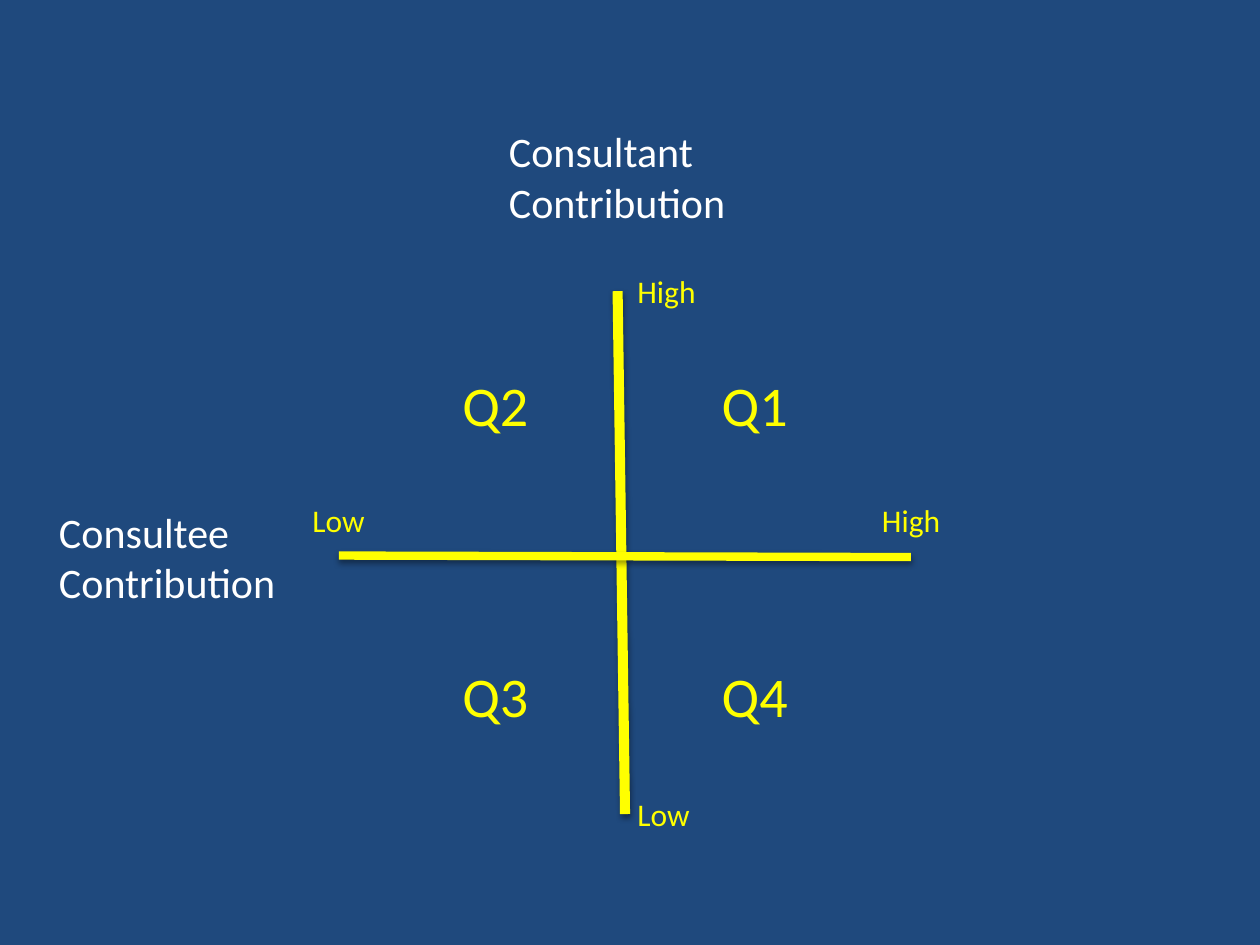
from pptx import Presentation
from pptx.dml.color import RGBColor
from pptx.enum.shapes import MSO_CONNECTOR
from pptx.enum.text import MSO_AUTO_SIZE
from pptx.util import Cm, Pt

STRAIGHT = MSO_CONNECTOR.STRAIGHT
GROW = MSO_AUTO_SIZE.SHAPE_TO_FIT_TEXT


class Theme:
    font = "Calibri"
    back = RGBColor(0x1F, 0x49, 0x7D)
    accent = RGBColor(0xFF, 0xFF, 0x00)
    light = RGBColor(0xFF, 0xFF, 0xFF)
    small, medium, large = Pt(18), Pt(24), Pt(32)


deck = Presentation()
deck.slide_width, deck.slide_height = Cm(25.4), Cm(19.05)
slide = deck.slides.add_slide(deck.slide_layouts[6])
slide.background.fill.solid()
slide.background.fill.fore_color.rgb = Theme.back


def add_text(lines, left, top, width, height, size, color):
    box = slide.shapes.add_textbox(Cm(left), Cm(top), Cm(width), Cm(height))
    frame = box.text_frame
    frame.word_wrap = False
    frame.auto_size = GROW
    frame.text = lines
    for para in frame.paragraphs:
        para.font.name = Theme.font
        para.font.size = size
        para.font.color.rgb = color


# Axes, with the soft shadow of the theme's line style
axes = [
    (12.45, 5.87, 12.6, 16.41, 5.75),
    (6.83, 11.2, 18.36, 11.23, 4.75),
]
for x1, y1, x2, y2, weight in axes:
    axis = slide.shapes.add_connector(STRAIGHT, Cm(x1), Cm(y1), Cm(x2), Cm(y2))
    axis.line.color.rgb = Theme.accent
    axis.line.width = Pt(weight)

# Ends of the axes
ends = [
    ("High", 12.6, 5.36, 1.7),
    ("Low", 12.6, 15.9, 1.57),
    ("High", 17.53, 9.98, 1.7),
    ("Low", 6.05, 9.98, 1.57),
]
for word, left, top, width in ends:
    add_text(word, left, top, width, 1.02, Theme.small, Theme.accent)

# Names of the axes
names = [("Consultant", 10.01, 2.41), ("Consultee", 0.94, 10.08)]
for who, left, top in names:
    add_text(who + "\nContribution", left, top, 4.93, 2.31,
             Theme.medium, Theme.light)

# Quadrants, counted anticlockwise from the top right
west, east = 9.07, 14.3
north, south = 7.34, 13.21
corners = [(east, north), (west, north), (west, south), (east, south)]
for number, (left, top) in enumerate(corners, 1):
    add_text(f"Q{number}", left, top, 1.85, 1.63, Theme.large, Theme.accent)

deck.save("out.pptx")
